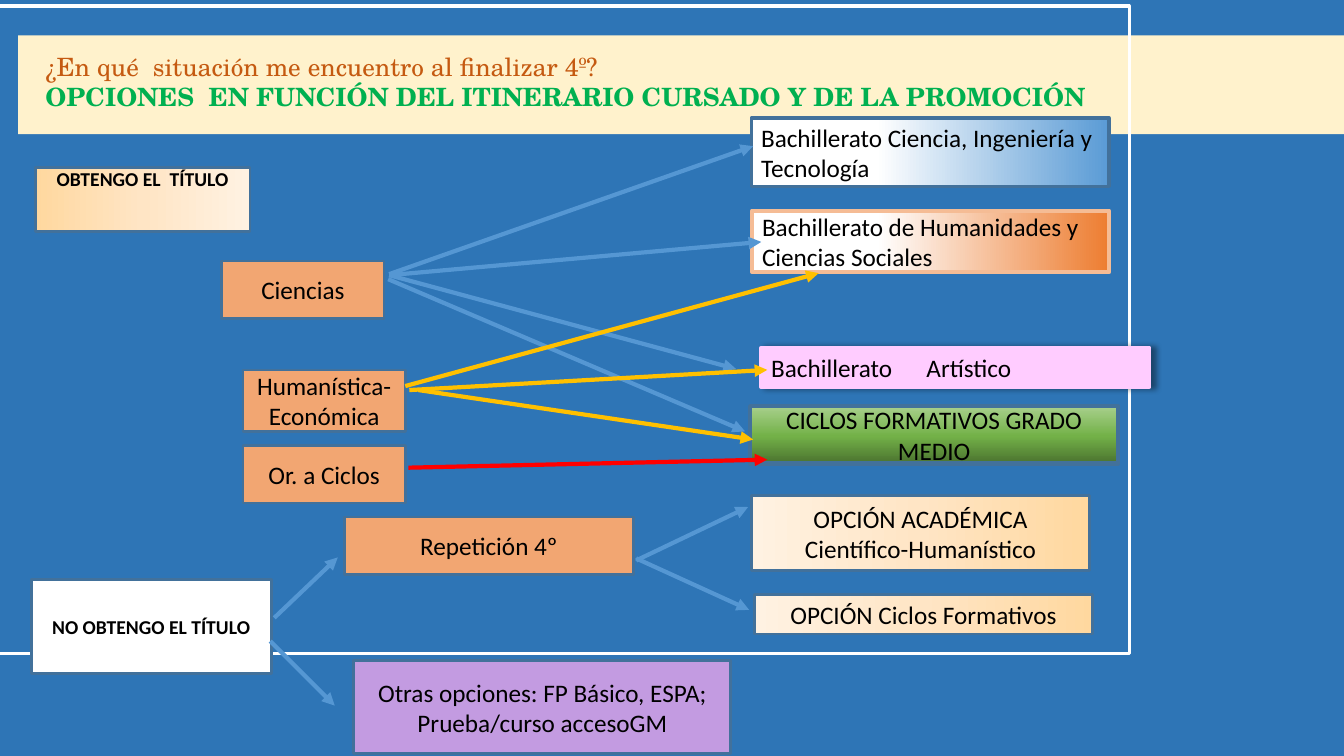
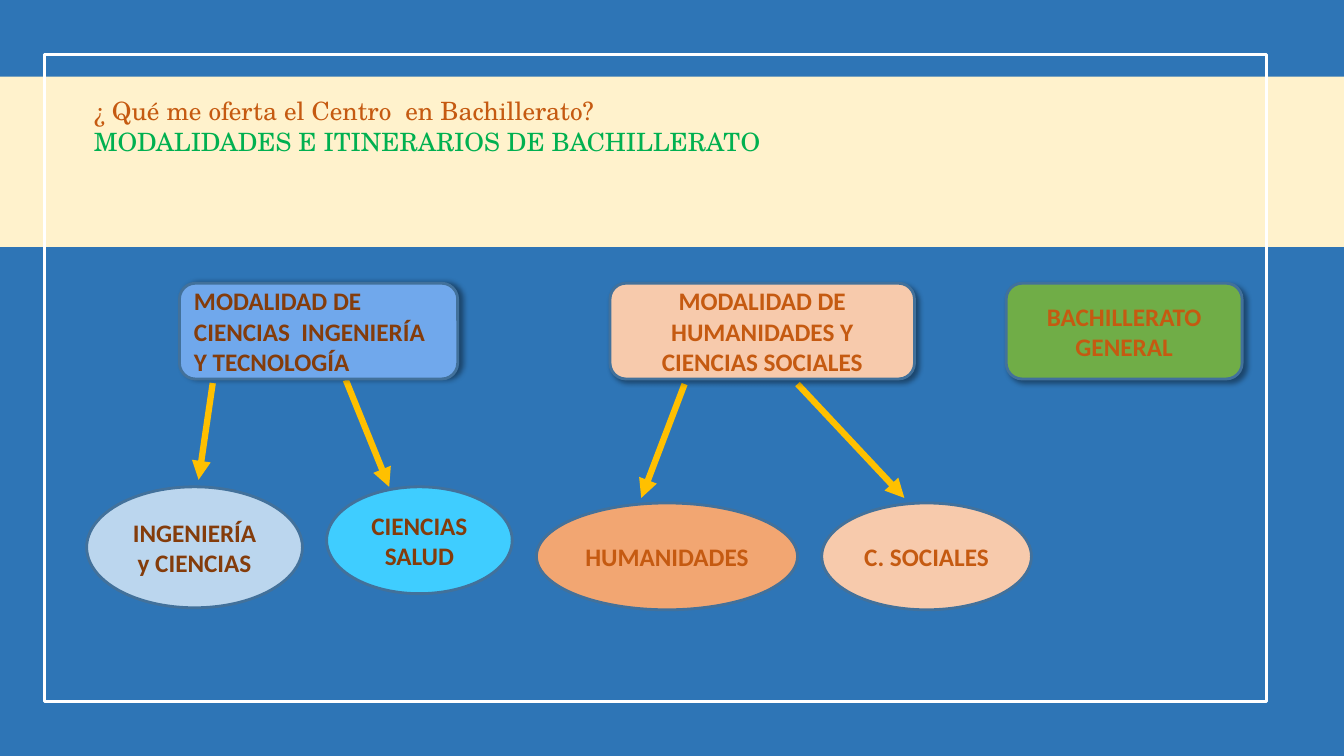
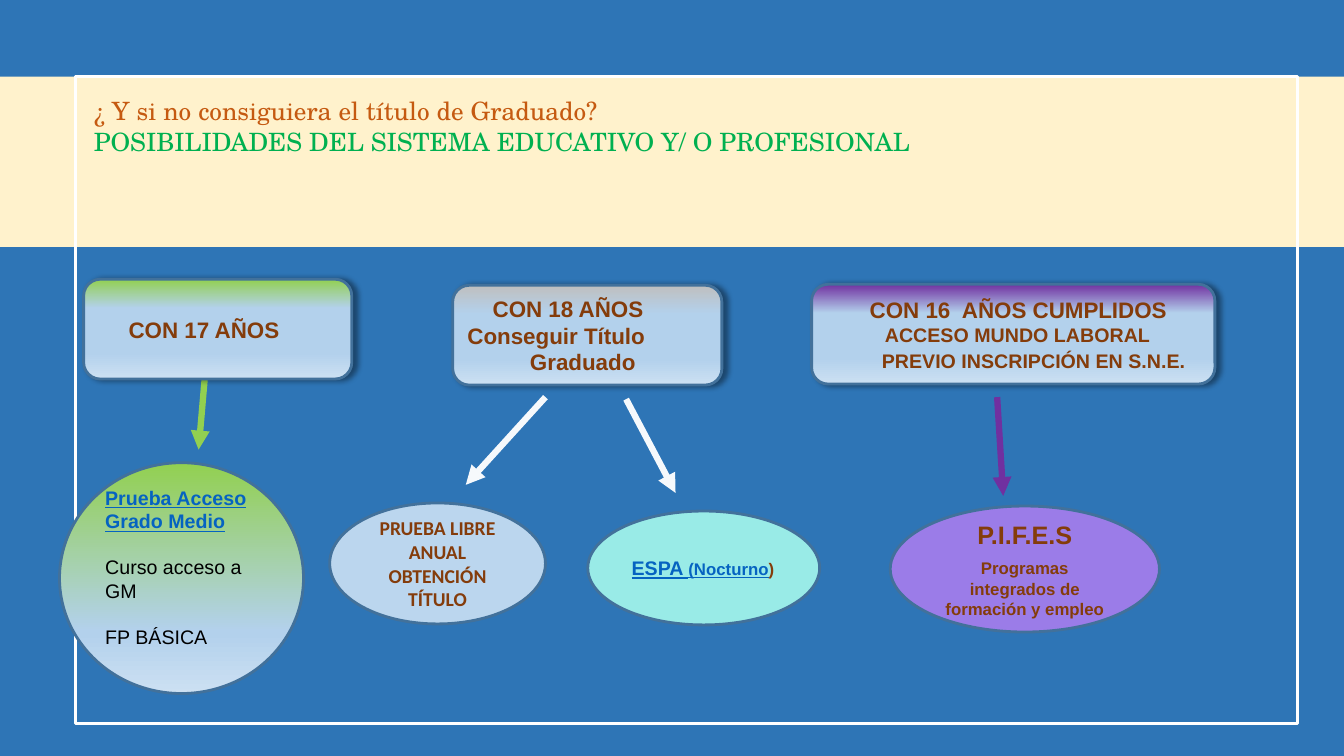
from dataclasses import dataclass

from lxml import etree
from pptx import Presentation
from pptx.dml.color import RGBColor
from pptx.enum.shapes import MSO_CONNECTOR, MSO_SHAPE
from pptx.enum.text import MSO_ANCHOR, MSO_AUTO_SIZE, PP_ALIGN
from pptx.oxml.ns import qn
from pptx.util import Inches, Pt

RECTANGLE, ROUNDED, OVAL = MSO_SHAPE.RECTANGLE, MSO_SHAPE.ROUNDED_RECTANGLE, MSO_SHAPE.OVAL
STRAIGHT = MSO_CONNECTOR.STRAIGHT
LEFT, CENTER = PP_ALIGN.LEFT, PP_ALIGN.CENTER
TOP, MIDDLE = MSO_ANCHOR.TOP, MSO_ANCHOR.MIDDLE

# Colours
BACKGROUND = RGBColor(0x2E, 0x75, 0xB6)
CREAM = RGBColor(0xFF, 0xF2, 0xCC)
WHITE = RGBColor(0xFF, 0xFF, 0xFF)
BLACK = RGBColor(0x00, 0x00, 0x00)
RUST = RGBColor(0xC5, 0x5A, 0x11)
GREEN = RGBColor(0x00, 0xB0, 0x50)
BROWN = RGBColor(0x84, 0x3C, 0x0B)
LINK = RGBColor(0x05, 0x63, 0xC1)
OUTLINE = RGBColor(0x42, 0x71, 0x9B)
ORANGE = RGBColor(0xF2, 0xA6, 0x72)
PEACH = RGBColor(0xF7, 0xCA, 0xAC)
PEACH_LINE = RGBColor(0xF5, 0xBC, 0x95)
LILAC = RGBColor(0xC3, 0x9B, 0xE1)
PINK = RGBColor(0xFF, 0xCC, 0xFF)
SKY = RGBColor(0x70, 0xA8, 0xEC)
PALE_BLUE = RGBColor(0xBB, 0xD6, 0xEE)
CYAN = RGBColor(0x3F, 0xCD, 0xFF)
LEAF = RGBColor(0x70, 0xAD, 0x47)
VIOLET = RGBColor(0x9B, 0x7C, 0xE8)
AQUA = RGBColor(0x99, 0xEB, 0xE7)
BLUE_ARROW = RGBColor(0x55, 0x97, 0xD3)
AMBER = RGBColor(0xFF, 0xC0, 0x00)
RED = RGBColor(0xFF, 0x00, 0x00)
LIME = RGBColor(0x92, 0xD0, 0x50)
PURPLE = RGBColor(0x70, 0x30, 0xA0)
NEAR_WHITE = RGBColor(0xF6, 0xF9, 0xFC)
GREY = RGBColor(0xBF, 0xBF, 0xBF)
APRICOT = RGBColor(0xFF, 0xD8, 0x9F)
APRICOT_MID = RGBColor(0xFF, 0xE5, 0xC5)
APRICOT_PALE = RGBColor(0xFF, 0xF2, 0xE2)
SCIENCE_BLUE = RGBColor(0x5A, 0x9B, 0xD5)
HUMANITIES_ORANGE = RGBColor(0xED, 0x7D, 0x31)
MOSS_LIGHT = RGBColor(0xA8, 0xD0, 0x8C)
MOSS = RGBColor(0x73, 0xB1, 0x48)
MOSS_DARK = RGBColor(0x4B, 0x73, 0x2F)
MIST = RGBColor(0xB3, 0xD1, 0xEC)
MIST_PALE = RGBColor(0xCC, 0xE0, 0xF2)


@dataclass
class Gradient:
    stops: list
    angle: int = 0  # counter-clockwise, 270 runs from top to bottom


@dataclass
class Style:
    font: str = "Calibri"
    size: float = 18
    color: RGBColor = BLACK
    bold: bool = False
    align: PP_ALIGN = CENTER


@dataclass
class Line:
    """A paragraph; what is None comes from the style of its shape."""
    text: str
    size: float = None
    color: RGBColor = None
    bold: bool = None
    underline: bool = False
    indent: float = 0
    before: float = 0
    tab: float = None


def mist(color, middle=29):
    return Gradient([(0, color), (middle, MIST), (74, MIST), (100, MIST_PALE)], 270)


APRICOT_RIGHT = Gradient([(0, APRICOT_PALE), (50, APRICOT_MID), (100, APRICOT)])
APRICOT_LEFT = Gradient([(0, APRICOT), (50, APRICOT_MID), (100, APRICOT_PALE)])

PLAIN = Style()
PLAIN_LEFT = Style(align=LEFT)
LABEL = Style(size=14, bold=True)
BROWN_BOLD = Style(color=BROWN, bold=True)
BROWN_LEFT = Style(color=BROWN, bold=True, align=LEFT)
RUST_BOLD = Style(color=RUST, bold=True)
AGE = Style("Arial", 16, BROWN, True, LEFT)
AGE_LEAF = Style("Arial", 14, BROWN, True, LEFT)
PROGRAMME = Style("Arial", 18, BROWN, True)
TITLE = Style("TeX Gyre Schola", 18, RUST, False, LEFT)


def set_font(font, style, line):
    font.name = style.font
    font.size = Pt(line.size or style.size)
    font.bold = style.bold if line.bold is None else line.bold
    font.underline = line.underline
    font.color.rgb = line.color or style.color


def write(shape, lines, style, anchor=MIDDLE):
    frame = shape.text_frame
    frame.word_wrap = True
    frame.auto_size = MSO_AUTO_SIZE.NONE
    frame.vertical_anchor = anchor
    for index, line in enumerate(lines):
        line = Line(line) if isinstance(line, str) else line
        paragraph = frame.paragraphs[0] if index == 0 else frame.add_paragraph()
        paragraph.text = line.text
        paragraph.alignment = style.align
        paragraph.space_before = Pt(line.before)
        set_font(paragraph.font, style, line)
        properties = paragraph._p.get_or_add_pPr()
        if line.indent:
            properties.set("marL", str(Inches(line.indent)))
        if line.tab:
            tabs = etree.Element(qn("a:tabLst"))
            etree.SubElement(tabs, qn("a:tab"), pos=str(Inches(line.tab)), algn="l")
            properties.find(qn("a:defRPr")).addprevious(tabs)


def paint(shape, fill):
    if fill is None:
        shape.fill.background()
    elif isinstance(fill, Gradient):
        shape.fill.gradient()
        shape.fill.gradient_angle = fill.angle
        stop_list = next(shape._element.spPr.iter(qn("a:gsLst")))
        stop_list.clear()
        for position, color in fill.stops:
            stop = etree.SubElement(stop_list, qn("a:gs"), pos=str(position * 1000))
            etree.SubElement(stop, qn("a:srgbClr"), val=str(color))
    else:
        shape.fill.solid()
        shape.fill.fore_color.rgb = fill


def add_shadow(shape, direction):
    effects = shape._element.spPr.find(qn("a:effectLst"))
    shadow = etree.SubElement(effects, qn("a:outerShdw"), blurRad=str(Pt(4)), dist=str(Pt(3)),
                              dir=str(direction * 60000), algn="tl", rotWithShape="0")
    color = etree.SubElement(shadow, qn("a:srgbClr"), val=str(BLACK))
    etree.SubElement(color, qn("a:alpha"), val="40000")


class Area:
    """A part of a slide; positions are inches from its top left corner."""

    def __init__(self, slide, left, top):
        self.shapes, self.left, self.top = slide.shapes, left, top

    def box(self, bounds, fill, lines=(), style=PLAIN, kind=RECTANGLE, line=OUTLINE,
            width=2, shadow=None, anchor=MIDDLE):
        x, y, w, h = bounds
        shape = self.shapes.add_shape(kind, Inches(self.left + x), Inches(self.top + y),
                                      Inches(w), Inches(h))
        paint(shape, fill)
        if line is None:
            shape.line.fill.background()
        else:
            shape.line.color.rgb = line
            shape.line.width = Pt(width)
        shape.shadow.inherit = False
        if shadow is not None:
            add_shadow(shape, shadow)
        write(shape, lines, style, anchor)
        return shape

    def arrow(self, start, end, color, width=3):
        (x1, y1), (x2, y2) = start, end
        connector = self.shapes.add_connector(
            STRAIGHT, Inches(self.left + x1), Inches(self.top + y1),
            Inches(self.left + x2), Inches(self.top + y2))
        connector.line.color.rgb = color
        connector.line.width = Pt(width)
        etree.SubElement(connector.line._get_or_add_ln(), qn("a:tailEnd"), type="triangle")
        etree.SubElement(connector._element.spPr, qn("a:effectLst"))


def add_slide(presentation, question, heading, band, frame, title_box, bold=False):
    """Slide with the cream band, the white frame and the two-line title."""
    slide = presentation.slides.add_slide(presentation.slide_layouts[5])
    page = Area(slide, 0, 0)
    page.box(band, CREAM, line=None)
    page.box((*frame, 12.12, 6.42), None, line=WHITE, width=2.25)
    title = slide.shapes.title
    title.left, title.top, title.width, title.height = map(Inches, title_box)
    write(title, [question, Line(heading, color=GREEN, bold=bold)], TITLE, TOP)
    slide.shapes._spTree.append(title._element)  # in front of the band
    return slide


def add_branch(slide, left, top, size, fill, lines, style, arrow_color=AMBER, arrows=(),
               leaves=(), shadow=0):
    """Rounded card with arrows to the ovals below; returns the ovals."""
    area = Area(slide, left, top)
    for start, end in arrows:
        area.arrow(start, end, arrow_color, 4.5)
    area.box((0, 0, *size), fill, lines, style, ROUNDED, shadow=shadow)
    return [area.box(*leaf, kind=OVAL) for leaf in leaves]


def add_title_routes(slide, left, top):
    """Routes for those who obtain the degree."""
    area = Area(slide, left, top)
    label = area.box((0, 0.49, 2.13, 0.64), APRICOT_LEFT, ["OBTENGO EL  TÍTULO"], LABEL, anchor=TOP)
    label.text_frame.margin_top = 0
    # Destinations
    area.box((7.1, 0, 3.55, 0.68), Gradient([(0, WHITE), (35, WHITE), (100, SCIENCE_BLUE)]),
             ["Bachillerato Ciencia, Ingeniería y", "Tecnología"], PLAIN_LEFT, width=2.25)
    area.box((7.11, 0.92, 3.54, 0.61), Gradient([(0, WHITE), (35, WHITE), (100, HUMANITIES_ORANGE)]),
             ["Bachillerato de Humanidades y Ciencias Sociales"], PLAIN_LEFT, line=PEACH_LINE, width=3)
    area.box((7.2, 2.28, 3.85, 0.39), PINK, [Line("Bachillerato\tArtístico", tab=1.54)],
             PLAIN_LEFT, line=PINK, width=3, shadow=0)
    area.box((7.09, 2.86, 3.65, 0.57),
             Gradient([(0, MOSS_LIGHT), (52, MOSS), (100, MOSS_DARK)], 270),
             ["CICLOS FORMATIVOS GRADO MEDIO"], width=3)
    # Itineraries
    for x, y, height, name in ((1.85, 1.42, 0.57, "Ciencias"),
                               (2.06, 2.5, 0.61, "Humanística-Económica"),
                               (2.06, 3.25, 0.57, "Or. a Ciclos")):
        area.box((x, y, 1.61, height), ORANGE, [name])
    for start, end, color in (
            ((3.51, 1.55), (7.12, 0.28), BLUE_ARROW),
            ((3.51, 1.56), (7.2, 1.23), BLUE_ARROW),
            ((3.51, 1.56), (6.95, 2.49), BLUE_ARROW),
            ((3.5, 1.6), (7.04, 3.11), BLUE_ARROW),
            ((3.67, 2.66), (7.77, 1.54), AMBER),
            ((3.71, 2.7), (7.26, 2.5), AMBER),
            ((3.8, 2.7), (7.12, 3.19), AMBER),
            ((3.7, 3.47), (7.26, 3.39), RED)):
        area.arrow(start, end, color)


def add_no_title_routes(slide, left, top):
    """Routes for those who do not obtain the degree."""
    area = Area(slide, left, top)
    area.box((0, 0.83, 2.38, 0.93), WHITE, ["NO OBTENGO EL TÍTULO"], LABEL)
    area.box((3.11, 0.21, 2.86, 0.57), ORANGE, ["Repetición 4º"])
    area.box((3.2, 1.63, 3.74, 0.93), LILAC,
             ["Otras opciones: FP Básico, ESPA; Prueba/curso accesoGM"])
    area.box((7.14, 0, 3.36, 0.74), APRICOT_RIGHT, ["OPCIÓN ACADÉMICA", "Científico-Humanístico"])
    area.box((7.17, 0.98, 3.36, 0.39), APRICOT_RIGHT, ["OPCIÓN Ciclos Formativos"])
    for start, end in (((6, 0.64), (7.11, 0.11)), ((6, 0.62), (7.12, 1.13)),
                       ((2.41, 1.21), (3.04, 0.61)), ((2.37, 1.44), (3.01, 2.08))):
        area.arrow(start, end, BLUE_ARROW)


def add_options_slide(presentation):
    slide = add_slide(presentation, "¿En qué  situación me encuentro al finalizar 4º?",
                      "OPCIONES  EN FUNCIÓN DEL ITINERARIO CURSADO Y DE LA PROMOCIÓN",
                      (0.18, 0.35, 13.33, 0.98), (-0.92, 0.06), (0.35, 0.46, 12.46, 0.7), True)
    add_title_routes(slide, 0.35, 1.17)
    add_no_title_routes(slide, 0.31, 4.92)


WIDE_BAND = (0, 0.76, 13.33, 1.69)
WIDE_TITLE = (0.83, 0.9, 9.39, 0.7)


def add_modalities_slide(presentation):
    slide = add_slide(presentation, "¿ Qué me oferta el Centro  en Bachillerato?",
                      "MODALIDADES E ITINERARIOS DE BACHILLERATO",
                      WIDE_BAND, (0.44, 0.54), WIDE_TITLE)
    add_branch(slide, 1.78, 2.81, (2.76, 0.95), SKY,
               ["MODALIDAD DE CIENCIAS  INGENIERÍA Y TECNOLOGÍA"], BROWN_LEFT,
               arrows=[((0.33, 0.99), (0.19, 1.95)), ((1.65, 0.96), (2.08, 2.02))],
               leaves=[((-0.92, 2.02, 2.14, 1.2), PALE_BLUE, ["INGENIERÍA y CIENCIAS"], BROWN_BOLD),
                       ((1.46, 2.02, 1.84, 1.06), CYAN, ["CIENCIAS", "SALUD"], BROWN_BOLD)])
    add_branch(slide, 6.05, 2.81, (3.02, 0.95), PEACH,
               ["MODALIDAD DE HUMANIDADES Y CIENCIAS SOCIALES"], RUST_BOLD,
               arrows=[((0.74, 1), (0.31, 2.13)), ((1.86, 1), (2.92, 2.13))],
               leaves=[((-0.73, 2.18, 2.59, 1.06), ORANGE, ["HUMANIDADES"], RUST_BOLD),
                       ((2.1, 2.18, 2.08, 1.06), PEACH, ["C. SOCIALES"], RUST_BOLD)], shadow=45)
    add_branch(slide, 9.98, 2.81, (2.34, 0.95), LEAF, ["BACHILLERATO GENERAL"], RUST_BOLD,
               shadow=45)


def add_no_degree_slide(presentation):
    slide = add_slide(presentation, "¿ Y si no consiguiera el título de Graduado?",
                      "POSIBILIDADES DEL SISTEMA EDUCATIVO Y/ O PROFESIONAL",
                      WIDE_BAND, (0.75, 0.76), WIDE_TITLE)
    # Aged 17
    access_lines = [Line("Prueba Acceso", color=LINK, underline=True),
                    Line("Grado Medio", color=LINK, underline=True),
                    Line("Curso acceso a GM", color=BLACK, bold=False, before=16),
                    Line("FP BÁSICA", color=BLACK, bold=False, before=16)]
    access, = add_branch(
        slide, 0.83, 2.77, (2.66, 0.99), mist(LIME), [Line("CON 17 AÑOS", indent=0.3)], AGE,
        LIME, [((1.2, 0.99), (1.14, 1.69))],
        [((-0.24, 1.82, 2.42, 2.29), mist(LIME, 73), access_lines, AGE_LEAF)])
    access.text_frame.margin_bottom = Inches(0.27)
    # Aged 18
    _, adult_school = add_branch(
        slide, 4.49, 2.83, (2.67, 0.99), mist(GREY),
        [Line("CON 18 AÑOS", indent=0.25), "Conseguir Título", Line("Graduado", indent=0.62)], AGE,
        NEAR_WHITE, [((0.92, 1.11), (0.13, 1.98)), ((1.72, 1.13), (2.21, 2.06))],
        [((-1.22, 2.16, 2.14, 1.2), PALE_BLUE, ["PRUEBA LIBRE ANUAL OBTENCIÓN TÍTULO"],
          Style(size=14, color=BROWN, bold=True)),
         ((1.34, 2.24, 2.3, 1.13), AQUA, [""], AGE_LEAF)])
    paragraph = adult_school.text_frame.paragraphs[0]
    for part in (Line("ESPA ", 14, LINK, underline=True),
                 Line("(Nocturno", 12, LINK, underline=True), Line(")", 12)):
        run = paragraph.add_run()
        run.text = part.text
        set_font(run.font, AGE_LEAF, part)
    # Aged 16
    add_branch(slide, 8.05, 2.82, (4, 0.99), mist(PURPLE),
               [Line("CON 16  AÑOS CUMPLIDOS", indent=0.43),
                Line("ACCESO MUNDO LABORAL", 14, indent=0.58),
                Line("PREVIO INSCRIPCIÓN EN S.N.E.", 14, indent=0.55, before=2)], AGE,
               PURPLE, [((1.84, 1.12), (1.9, 2.1))],
               [((0.78, 2.2, 2.67, 1.25), VIOLET,
                 ["P.I.F.E.S", Line("Programas integrados de formación y empleo", 12, before=6)],
                 PROGRAMME)])


def main():
    presentation = Presentation()
    presentation.slide_width, presentation.slide_height = Inches(13.33), Inches(7.5)
    background = presentation.slide_master.background.fill
    background.solid()
    background.fore_color.rgb = BACKGROUND
    add_options_slide(presentation)
    add_modalities_slide(presentation)
    add_no_degree_slide(presentation)
    presentation.save("out.pptx")


if __name__ == "__main__":
    main()
